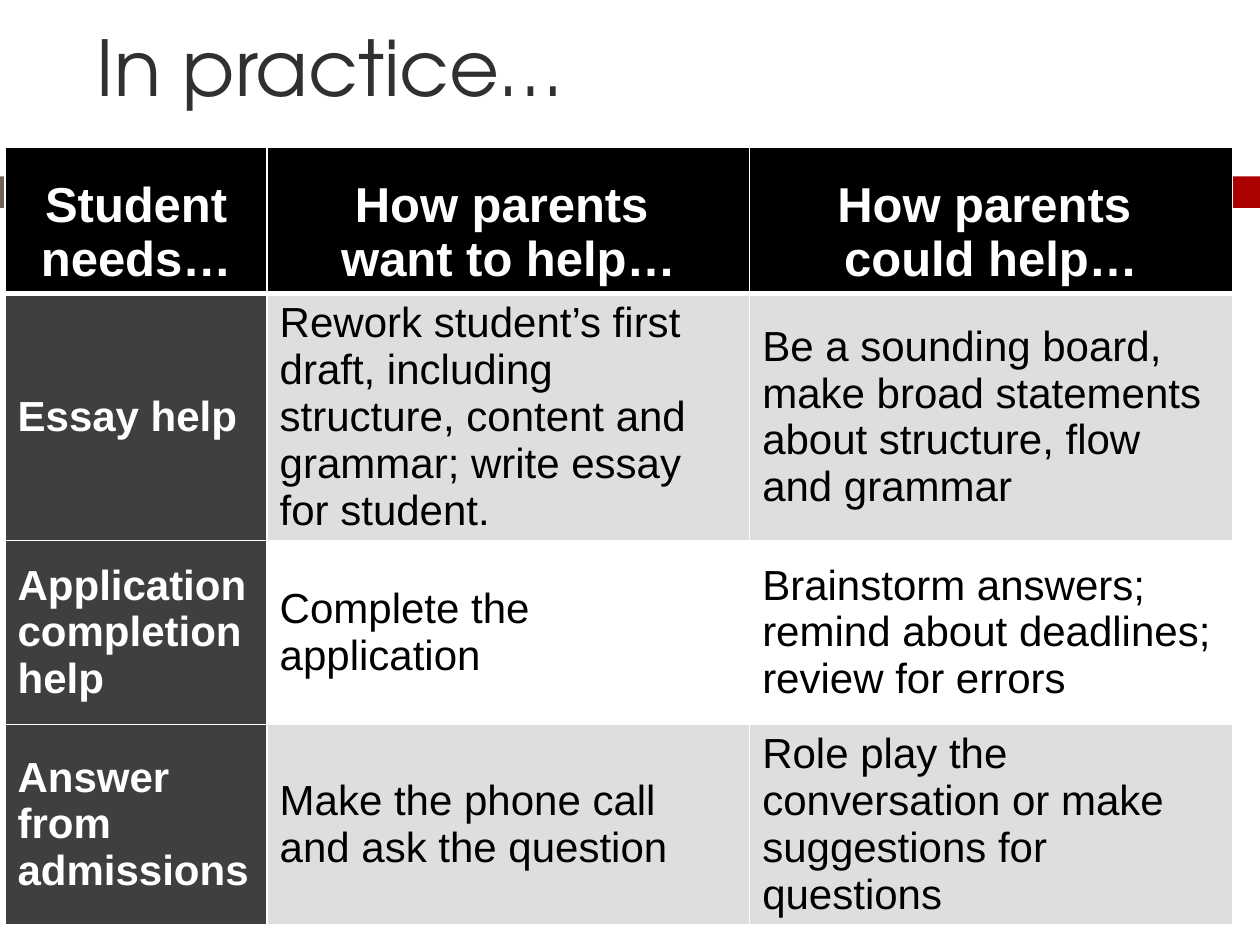
from typing import NamedTuple

from lxml import etree
from pptx import Presentation
from pptx.dml.color import RGBColor
from pptx.enum.shapes import MSO_SHAPE
from pptx.enum.text import MSO_ANCHOR, PP_ALIGN
from pptx.oxml.ns import qn
from pptx.util import Inches, Pt

RECT = MSO_SHAPE.RECTANGLE
MIDDLE, BOTTOM = MSO_ANCHOR.MIDDLE, MSO_ANCHOR.BOTTOM
LEFT, CENTER = PP_ALIGN.LEFT, PP_ALIGN.CENTER

WIDTH, HEIGHT = 10, 7.5
COLS = (2.08, 3.83, 3.83)
ROWS = (1.16, 1.91, 1.46, 1.46)
BLACK, WHITE, DARK, BAND = "000000", "FFFFFF", "3F3F3F", "DEDEE0"
BORDERS = ("a:lnL", "a:lnR", "a:lnT", "a:lnB")

CELLS = (
    ("Student needs…", "How parents \nwant to help…", "How parents \ncould help…"),
    ("Essay help",
     "Rework student’s first draft, including structure, content and grammar; "
     "write essay for student.",
     "Be a sounding board, make broad statements about structure, flow and grammar"),
    ("Application completion help", "Complete the application",
     "Brainstorm answers; remind about deadlines; review for errors"),
    ("Answer from admissions", "Make the phone call and ask the question",
     "Role play the conversation or make suggestions for questions"),
)


class Bar(NamedTuple):
    left: float
    width: float
    color: str


class CellStyle(NamedTuple):
    fill: str
    color: str
    size: int
    bold: bool
    align: PP_ALIGN
    anchor: MSO_ANCHOR


BARS = (Bar(0, 0.58, "726056"), Bar(0.65, 9.35, "AD0101"))
HEADER = CellStyle(BLACK, WHITE, 28, True, CENTER, BOTTOM)
NEED = CellStyle(DARK, WHITE, 24, True, LEFT, MIDDLE)
BANDED = CellStyle(BAND, BLACK, 24, False, LEFT, MIDDLE)
PLAIN = BANDED._replace(fill=WHITE)


def rgb(value: str) -> RGBColor:
    """Turn a hex string into a colour."""
    return RGBColor.from_string(value)


def add_bar(slide, bar: Bar) -> None:
    """Draw one flat piece of the accent band."""
    sp = slide.shapes.add_shape(RECT, Inches(bar.left), Inches(1.4),
                                Inches(bar.width), Inches(0.25))
    sp.shadow.inherit = False
    sp.fill.solid()
    sp.fill.fore_color.rgb = rgb(bar.color)
    sp.line.fill.background()


def set_font(p, name: str, size: int, color: str, bold: bool = False) -> None:
    """Set the font of a whole paragraph."""
    p.font.name, p.font.size, p.font.bold = name, Pt(size), bold
    p.font.color.rgb = rgb(color)


def add_title(slide, text: str) -> None:
    """Write the slide title."""
    box = slide.shapes.add_textbox(Inches(0.67), Inches(-0.02), Inches(8.92), Inches(1.08))
    tf = box.text_frame
    tf.word_wrap, tf.vertical_anchor = True, MIDDLE
    p = tf.paragraphs[0]
    p.text = text
    set_font(p, "TeX Gyre Adventor", 44, "303030")


def set_borders(cell, widths: dict[str, int]) -> None:
    """Put white lines of the given point widths ahead of the cell's fill."""
    tc_pr = cell._tc.get_or_add_tcPr()
    for i, (tag, width) in enumerate(widths.items()):
        ln = etree.Element(qn(tag), w=str(Pt(width)))
        fill = etree.SubElement(ln, qn("a:solidFill"))
        etree.SubElement(fill, qn("a:srgbClr"), val=WHITE)
        tc_pr.insert(i, ln)


def style_at(row: int, col: int) -> CellStyle:
    """Pick the style by place in the table."""
    if row == 0:
        return HEADER
    if col == 0:
        return NEED
    return BANDED if row % 2 else PLAIN


def fill_cell(cell, text: str, style: CellStyle) -> None:
    """Write and style one cell."""
    cell.fill.solid()
    cell.fill.fore_color.rgb = rgb(style.fill)
    cell.vertical_anchor = style.anchor
    p = cell.text_frame.paragraphs[0]
    p.text, p.alignment = text, style.align
    set_font(p, "Arial", style.size, style.color, style.bold)


def add_help_table(slide) -> None:
    """Draw the table of student needs and parent help."""
    table = slide.shapes.add_table(len(ROWS), len(COLS), Inches(0.04), Inches(1.17),
                                   Inches(sum(COLS)), Inches(sum(ROWS))).table
    for column, width in zip(table.columns, COLS):
        column.width = Inches(width)
    for r, (height, texts) in enumerate(zip(ROWS, CELLS)):
        table.rows[r].height = Inches(height)
        for c, text in enumerate(texts):
            cell = table.cell(r, c)
            fill_cell(cell, text, style_at(r, c))
            widths = dict.fromkeys(BORDERS, 1)
            if r == 0:
                widths["a:lnB"] = 3
            elif r == 1:
                widths["a:lnT"] = 3
            set_borders(cell, widths)


def main() -> None:
    """Build the slide and save it."""
    prs = Presentation()
    prs.slide_width, prs.slide_height = Inches(WIDTH), Inches(HEIGHT)
    slide = prs.slides.add_slide(prs.slide_layouts[6])
    for bar in BARS:
        add_bar(slide, bar)
    add_help_table(slide)
    add_title(slide, "In practice…")
    prs.save("out.pptx")


if __name__ == "__main__":
    main()
